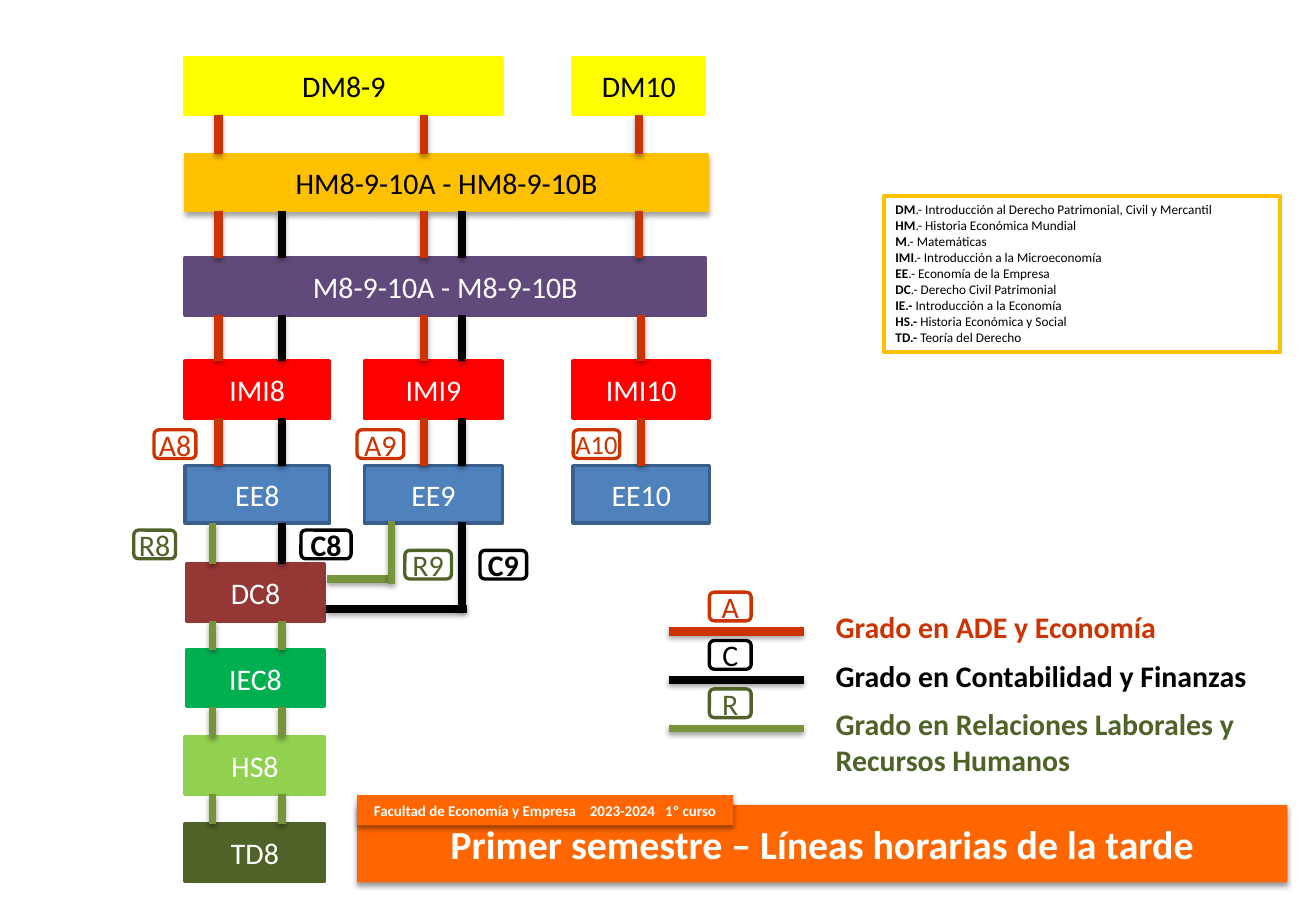
from lxml import etree
from pptx import Presentation
from pptx.dml.color import RGBColor
from pptx.enum.shapes import MSO_CONNECTOR, MSO_SHAPE
from pptx.enum.text import MSO_ANCHOR, PP_ALIGN
from pptx.oxml.ns import qn
from pptx.util import Inches, Pt

COLORS = {
    "black": "000000", "white": "FFFFFF", "yellow": "FFFF00", "amber": "FFC000",
    "purple": "604A7B", "red": "FF0000", "blue": "4F81BD", "navy": "3A5F8C",
    "maroon": "953735", "green": "00B050", "lime": "92D050", "olive": "4F6228",
    "orange": "FF6600", "rust": "CC3300", "moss": "77933C",
}
# Degree: (line colour, text colour, line width)
DEGREES = {"A": ("rust", "rust", 5), "C": ("black", "black", 4.5), "R": ("moss", "olive", 4.5)}
BOX_H = 0.48
ROWS = [0, 0.81, 1.68, 2.54, 3.42, 4.24, 4.96, 5.69, 6.42]
# Subject: (row, x, width, fill, text colour)
SUBJECTS = {
    "DM8-9": (0, 0, 2.66, "yellow", "black"),
    "DM10": (0, 3.25, 1.1, "yellow", "black"),
    "HM8-9-10A - HM8-9-10B": (1, 0, 4.38, "amber", "black"),
    "M8-9-10A - M8-9-10B": (2, 0, 4.36, "purple", "white"),
    "IMI8": (3, 0, 1.21, "red", "white"),
    "IMI9": (3, 1.5, 1.16, "red", "white"),
    "IMI10": (3, 3.25, 1.14, "red", "white"),
    "EE8": (4, 0, 1.21, "blue", "white"),
    "EE9": (4, 1.5, 1.16, "blue", "white"),
    "EE10": (4, 3.25, 1.14, "blue", "white"),
    "DC8": (5, 0.01, 1.16, "maroon", "white"),
    "IEC8": (6, 0.01, 1.16, "green", "white"),
    "HS8": (7, 0, 1.17, "lime", "white"),
    "TD8": (8, 0, 1.17, "olive", "white"),
}
# Links in the gap below each row: (degree, x)
SHARED = [("A", 0.28), ("C", 0.81), ("A", 2.0), ("C", 2.32)]
LABOUR = [("R", 0.23), ("R", 0.81)]
GAPS = [
    [("A", 0.28), ("A", 2.0)],
    SHARED + [("A", 3.8)],
    SHARED,
    SHARED,
    [("R", 0.23), ("C", 0.81)],
    LABOUR, LABOUR, LABOUR,
]
ELBOWS = [
    ("C", 1.18, 4.62, 2.36, 4.62), ("C", 2.32, 3.89, 2.32, 4.63),
    ("R", 1.19, 4.37, 1.7, 4.37), ("R", 1.73, 3.88, 1.73, 4.41),
]
# Tag: (x, y, width, size)
TAGS = {
    "A8": (-0.26, 3.12, 0.35, 18), "A9": (1.44, 3.12, 0.39, 18),
    "A10": (3.25, 3.12, 0.39, 16), "R8": (-0.43, 3.96, 0.35, 18),
    "C8": (0.97, 3.96, 0.42, 18), "R9": (1.84, 4.13, 0.39, 18),
    "C9": (2.47, 4.13, 0.39, 18),
}
DEGREE_NAMES = {
    "A": "Grado en ADE y Economía",
    "C": "Grado en Contabilidad y Finanzas",
    "R": "Grado en Relaciones Laborales y Recursos Humanos",
}
ABBREVIATIONS = [
    ("DM", ".- Introducción al Derecho Patrimonial, Civil y Mercantil"),
    ("HM", ".- Historia Económica Mundial"),
    ("M", ".- Matemáticas"),
    ("IMI", ".- Introducción a la Microeconomía"),
    ("EE", ".- Economía de la Empresa"),
    ("DC", ".- Derecho Civil Patrimonial"),
    ("IE.- ", "Introducción a la Economía"),
    ("HS.- ", "Historia Económica y Social"),
    ("TD.- ", "Teoría del Derecho"),
]


def rgb(name):
    return RGBColor.from_string(COLORS[name])


def add_effects(sp, alpha=None):
    """Give a soft shadow of the given opacity, or none at all."""
    effects = etree.SubElement(sp._element.spPr, qn("a:effectLst"))
    if alpha:
        shadow = etree.SubElement(effects, qn("a:outerShdw"), blurRad=str(Pt(3.1)),
                                  dist=str(Pt(1.8)), dir="5400000", rotWithShape="0")
        color = etree.SubElement(shadow, qn("a:srgbClr"), val=COLORS["black"])
        etree.SubElement(color, qn("a:alpha"), val=str(alpha * 1000))


def style(p, size, color, bold=None, align=PP_ALIGN.CENTER):
    p.alignment = align
    f = p.font
    f.name, f.size, f.bold = "Calibri", Pt(size), bold
    f.color.rgb = rgb(color)


def add_box(s, x, y, w, h, fill=None, line=None, width=2, kind=MSO_SHAPE.RECTANGLE, shadow=None):
    sp = s.shapes.add_shape(kind, Inches(x), Inches(y), Inches(w), Inches(h))
    if fill:
        sp.fill.solid()
        sp.fill.fore_color.rgb = rgb(fill)
    else:
        sp.fill.background()
    if line:
        sp.line.color.rgb = rgb(line)
        sp.line.width = Pt(width)
    else:
        sp.line.fill.background()
    add_effects(sp, shadow)
    sp.text_frame.vertical_anchor = MSO_ANCHOR.MIDDLE
    return sp


def add_text(sp, text, *font):
    p = sp.text_frame.paragraphs[0]
    p.text = text
    style(p, *font)


def add_tag(s, text, x, y, w, size=18):
    color = DEGREES[text[0]][1]
    sp = add_box(s, x, y, w, 0.24, line=color, kind=MSO_SHAPE.ROUNDED_RECTANGLE)
    tf = sp.text_frame
    tf.word_wrap = False
    tf.margin_left = tf.margin_right = 0
    tf.margin_top = tf.margin_bottom = Inches(0.04)
    add_text(sp, text, size, color, text in ("C8", "C9"))


def add_line(s, degree, x1, y1, x2, y2):
    color, _, width = DEGREES[degree]
    line = s.shapes.add_connector(MSO_CONNECTOR.STRAIGHT, Inches(x1), Inches(y1),
                                  Inches(x2), Inches(y2))
    line.line.color.rgb = rgb(color)
    line.line.width = Pt(width)
    add_effects(line, 35)
    return line


def add_timetable(s, x, y):
    boxes = {}
    for name, (row, dx, w, fill, color) in SUBJECTS.items():
        raised = fill == "amber"
        boxes[name] = add_box(s, x + dx, y + ROWS[row], w, BOX_H, fill,
                              "navy" if fill == "blue" else fill,
                              0.75 if raised else 2, shadow=35 if raised else None)
        add_text(boxes[name], name, 18, color)

    def link(row, degree, dx):
        return add_line(s, degree, x + dx, y + ROWS[row] + BOX_H, x + dx, y + ROWS[row + 1])

    for row, links in enumerate(GAPS):
        for degree, dx in links:
            link(row, degree, dx)
    link(0, "A", 3.8).begin_connect(boxes["DM10"], 2)
    link(2, "A", 3.82).end_connect(boxes["IMI10"], 0)
    last = link(3, "A", 3.82)
    last.begin_connect(boxes["IMI10"], 2)
    last.end_connect(boxes["EE10"], 0)
    for degree, x1, y1, x2, y2 in ELBOWS:
        add_line(s, degree, x + x1, y + y1, x + x2, y + y2)
    for text, (dx, dy, w, size) in TAGS.items():
        add_tag(s, text, x + dx, y + dy, w, size)


def add_degree_legend(s, x, y):
    for i, (degree, name) in enumerate(DEGREE_NAMES.items()):
        top = y + i * 0.405
        add_tag(s, degree, x + 0.34, top, 0.35)
        add_line(s, degree, x, top + 0.33, x + 1.13, top + 0.33)
        tb = s.shapes.add_textbox(Inches(x + 1.3), Inches(top + 0.09), Inches(4.12),
                                  Inches(0.72 if degree == "R" else 0.41))
        tb.text_frame.word_wrap = True
        add_text(tb, name, 18, DEGREES[degree][1], True, PP_ALIGN.LEFT)


def add_abbreviations(s, x, y, w, h):
    tf = add_box(s, x, y, w, h, line="amber", width=2.25).text_frame
    tf.vertical_anchor = MSO_ANCHOR.TOP
    for i, (short, meaning) in enumerate(ABBREVIATIONS):
        p = tf.add_paragraph() if i else tf.paragraphs[0]
        style(p, 8, "black", align=PP_ALIGN.LEFT)
        for text, bold in ((short, True), (meaning, False)):
            r = p.add_run()
            r.text, r.font.bold = text, bold


def add_banner(s, x, y, w, h):
    title = add_box(s, x, y + 0.08, w, h - 0.08, "orange", shadow=38)
    add_text(title, "Primer semestre – Líneas horarias de la tarde", 24, "white", True)
    strip = add_box(s, x, y, 3.15, 0.25, "orange", shadow=38)
    strip.text_frame.margin_left = Inches(0.14)
    strip.text_frame.margin_right = 0
    tabs = etree.SubElement(strip.text_frame.paragraphs[0]._p.get_or_add_pPr(), qn("a:tabLst"))
    for pos in (1.81, 2.44):
        etree.SubElement(tabs, qn("a:tab"), pos=str(Inches(pos)), algn="l")
    add_text(strip, "Facultad de Economía y Empresa\t2023-2024\t1º curso", 9, "white", True,
             PP_ALIGN.LEFT)


def main():
    prs = Presentation()
    prs.slide_width, prs.slide_height = Inches(11.02), Inches(7.68)
    s = prs.slides.add_slide(prs.slide_layouts[6])
    add_timetable(s, 1.55, 0.48)
    add_degree_legend(s, 5.6, 4.96)
    add_abbreviations(s, 7.4, 1.64, 3.32, 1.31)
    add_banner(s, 2.99, 6.66, 7.79, 0.73)
    prs.save("out.pptx")


if __name__ == "__main__":
    main()
